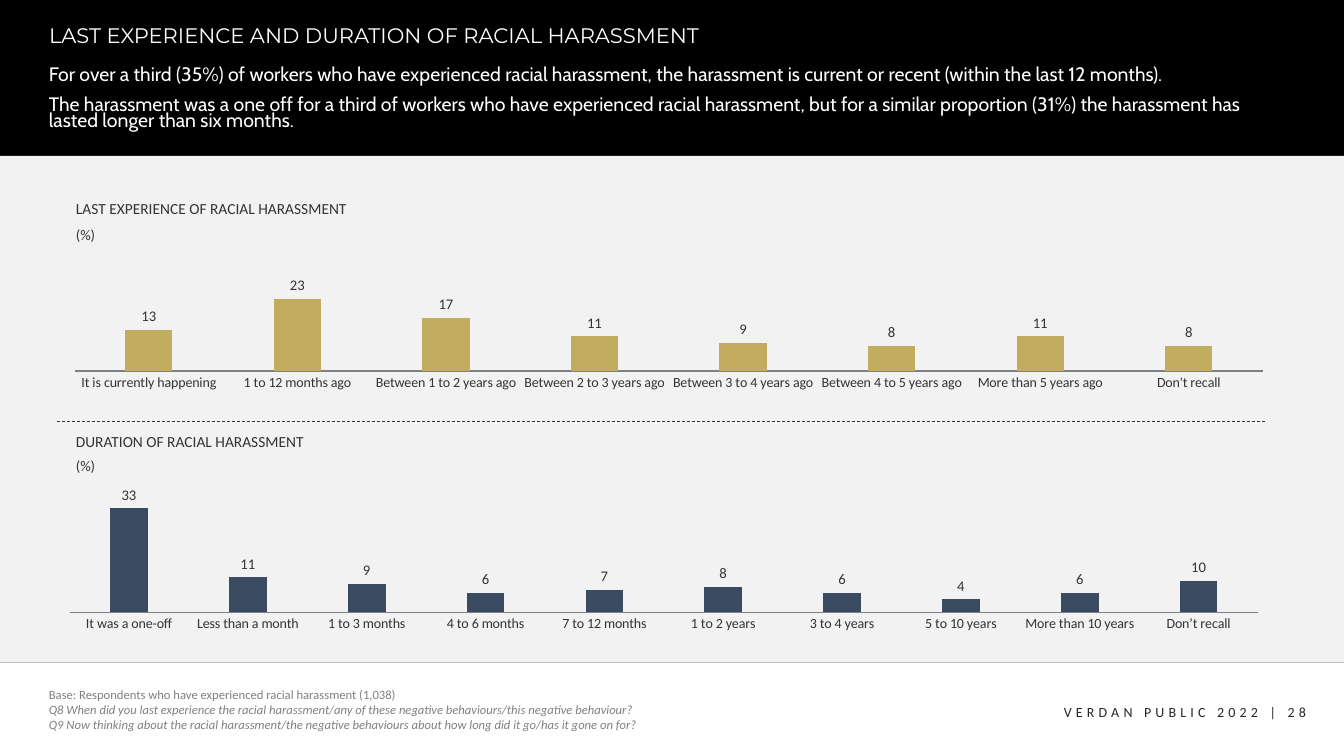
from pptx import Presentation
from pptx.chart.data import CategoryChartData
from pptx.dml.color import RGBColor
from pptx.enum.chart import XL_CHART_TYPE, XL_LABEL_POSITION, XL_TICK_MARK
from pptx.enum.dml import MSO_LINE
from pptx.enum.shapes import MSO_CONNECTOR, MSO_SHAPE
from pptx.enum.text import MSO_ANCHOR, MSO_AUTO_SIZE, PP_ALIGN
from pptx.oxml import parse_xml
from pptx.oxml.ns import nsdecls, qn
from pptx.util import Emu, Pt
from lxml.etree import SubElement

BLACK = RGBColor(0x00, 0x00, 0x00)
WHITE = RGBColor(0xFF, 0xFF, 0xFF)
PANEL = RGBColor(0xF2, 0xF2, 0xF2)
RULE = RGBColor(0xBF, 0xBF, 0xBF)
INK = RGBColor(0x33, 0x33, 0x33)
FOOTER = RGBColor(0x26, 0x26, 0x26)
GREY = RGBColor(0x80, 0x80, 0x80)
GOLD = RGBColor(0xC1, 0xAC, 0x5F)
NAVY = RGBColor(0x3A, 0x4A, 0x60)

PAGE_WIDTH, PAGE_HEIGHT = 1344, 756
PLOT_LAYOUT = {"x": 0.038, "y": 0.265, "w": 0.93, "h": 0.547}

LAST_EXPERIENCE = {
    "It is currently happening": 13,
    "1 to 12 months ago": 23,
    "Between 1 to 2 years ago": 17,
    "Between 2 to 3 years ago": 11,
    "Between 3 to 4 years ago": 9,
    "Between 4 to 5 years ago": 8,
    "More than 5 years ago": 11,
    "Don't recall": 8,
}
DURATION = {
    "It was a one-off": 33,
    "Less than a month": 11,
    "1 to 3 months": 9,
    "4 to 6 months": 6,
    "7 to 12 months": 7,
    "1 to 2 years": 8,
    "3 to 4 years": 6,
    "5 to 10 years": 4,
    "More than 10 years": 6,
    "Don’t recall": 10,
}


def px(length):
    return Emu(round(length * 914400 / 100.8))


class SlideBuilder:
    font = "Calibri"

    def __init__(self, page):
        self.page = page

    def band(self, top, height, color):
        box = self.page.shapes.add_shape(
            MSO_SHAPE.RECTANGLE, 0, px(top), px(PAGE_WIDTH), px(height))
        box.shadow.inherit = False
        box.fill.solid()
        box.fill.fore_color.rgb = color
        box.line.fill.background()

    def rule(self, left, right, top, color, dash=None):
        line = self.page.shapes.add_connector(
            MSO_CONNECTOR.STRAIGHT, px(left), px(top), px(right), px(top))
        line.line.color.rgb = color
        line.line.width = Pt(0.5)
        if dash:
            line.line.dash_style = dash
        SubElement(line.element.spPr, qn("a:effectLst"))

    def format_text(self, frame, text, size, color, font=None,
                    anchor=MSO_ANCHOR.MIDDLE, spacing=None, before=0):
        frame.text = text
        frame.word_wrap = True
        frame.auto_size = MSO_AUTO_SIZE.NONE
        frame.vertical_anchor = anchor
        for para in frame.paragraphs:
            para.alignment = PP_ALIGN.LEFT
            para.space_before = Pt(before)
            if spacing:
                para.line_spacing = spacing
            for span in para.runs:
                span.font.name = font or self.font
                span.font.size = Pt(size)
                span.font.color.rgb = color

    def title(self, left, top, width, height, text, size, color, font):
        box = self.page.shapes.title
        box.left, box.top = px(left), px(top)
        box.width, box.height = px(width), px(height)
        self.format_text(box.text_frame, text, size, color, font,
                         MSO_ANCHOR.TOP, 0.9)
        box.element.getparent().append(box.element)

    def text(self, left, top, width, height, text, size, color, **style):
        box = self.page.shapes.add_textbox(px(left), px(top), px(width), px(height))
        self.format_text(box.text_frame, text, size, color, **style)
        return box.text_frame.paragraphs

    def column_chart(self, left, top, values, color):
        data = CategoryChartData()
        data.categories = list(values)
        data.add_series("Series 1", list(values.values()))
        chart = self.page.shapes.add_chart(
            XL_CHART_TYPE.COLUMN_CLUSTERED, px(left), px(top),
            px(1278), px(345), data).chart
        chart.has_title = False
        chart.has_legend = False
        chart.font.name = self.font
        chart.font.size = Pt(10.5)
        chart.font.color.rgb = INK

        value_axis = chart.value_axis
        value_axis.minimum_scale = 0
        value_axis.maximum_scale = 60
        value_axis.has_major_gridlines = False
        value_axis.visible = False
        category_axis = chart.category_axis
        category_axis.major_tick_mark = XL_TICK_MARK.NONE
        category_axis.tick_labels.font.size = Pt(10)
        category_axis.format.line.color.rgb = GREY
        category_axis.format.line.width = Pt(0.75)

        plot = chart.plots[0]
        plot.gap_width = 215
        plot.vary_by_categories = False
        plot.has_data_labels = True
        plot.data_labels.show_value = True
        plot.data_labels.position = XL_LABEL_POSITION.OUTSIDE_END
        fill = plot.series[0].format.fill
        fill.solid()
        fill.fore_color.rgb = color
        self.place_plot(chart)

    def place_plot(self, chart):
        plot_area = chart.element.find(".//" + qn("c:plotArea"))
        for layout in plot_area.findall(qn("c:layout")):
            plot_area.remove(layout)
        modes = '<c:xMode val="edge"/><c:yMode val="edge"/>'
        sizes = "".join(f'<c:{key} val="{share}"/>'
                        for key, share in PLOT_LAYOUT.items())
        plot_area.insert(0, parse_xml(
            f'<c:layout {nsdecls("c")}><c:manualLayout>'
            f'<c:layoutTarget val="inner"/>{modes}{sizes}'
            '</c:manualLayout></c:layout>'))


def main():
    deck = Presentation()
    deck.slide_width, deck.slide_height = px(PAGE_WIDTH), px(PAGE_HEIGHT)
    builder = SlideBuilder(deck.slides.add_slide(deck.slide_layouts[5]))

    builder.band(0, 158, BLACK)
    builder.rule(0, PAGE_WIDTH, 662, RULE)
    footer = builder.text(1016, 698, 300, 27, "VERDAN PUBLIC 2022 | 28", 10, FOOTER)[0]
    footer.alignment = PP_ALIGN.RIGHT
    footer.runs[0].font._element.set("spc", "300")
    builder.band(156, 506, PANEL)

    builder.title(39, 20, 1097, 40,
                  "LAST EXPERIENCE AND DURATION OF RACIAL HARASSMENT",
                  15, WHITE, "Montserrat")
    builder.text(
        39, 60, 1265, 79,
        "For over a third (35%) of workers who have experienced racial harassment, "
        "the harassment is current or recent (within the last 12 months).\n"
        "The harassment was a one off for a third of workers who have experienced "
        "racial harassment, but for a similar proportion (31%) the harassment has "
        "lasted longer than six months.",
        13.9, WHITE, font="Cabin", spacing=0.7, before=10)

    notes = builder.text(
        39, 681, 963, 57,
        "Base: Respondents who have experienced racial harassment (1,038)\n"
        "Q8 When did you last experience the racial harassment/any of these "
        "negative behaviours/this negative behaviour?\v"
        "Q9 Now thinking about the racial harassment/the negative behaviours "
        "about how long did it go/has it gone on for?",
        9, GREY)
    for span in notes[1].runs:
        span.font.italic = True

    sections = [
        ("LAST EXPERIENCE OF RACIAL HARASSMENT", 184, 211, 26, 91, LAST_EXPERIENCE, GOLD),
        ("DURATION OF RACIAL HARASSMENT", 417, 442, 21, 332, DURATION, NAVY),
    ]
    for heading, heading_top, unit_top, left, top, values, color in sections:
        builder.column_chart(left, top, values, color)
        builder.text(66, heading_top, 389, 50, heading, 11, INK, spacing=0.9, before=10)
        builder.text(66, unit_top, 52, 50, "(%)", 10.5, INK, spacing=0.9, before=10)
    builder.rule(57, 1266, 421, INK, MSO_LINE.DASH)

    deck.save("out.pptx")


if __name__ == "__main__":
    main()
